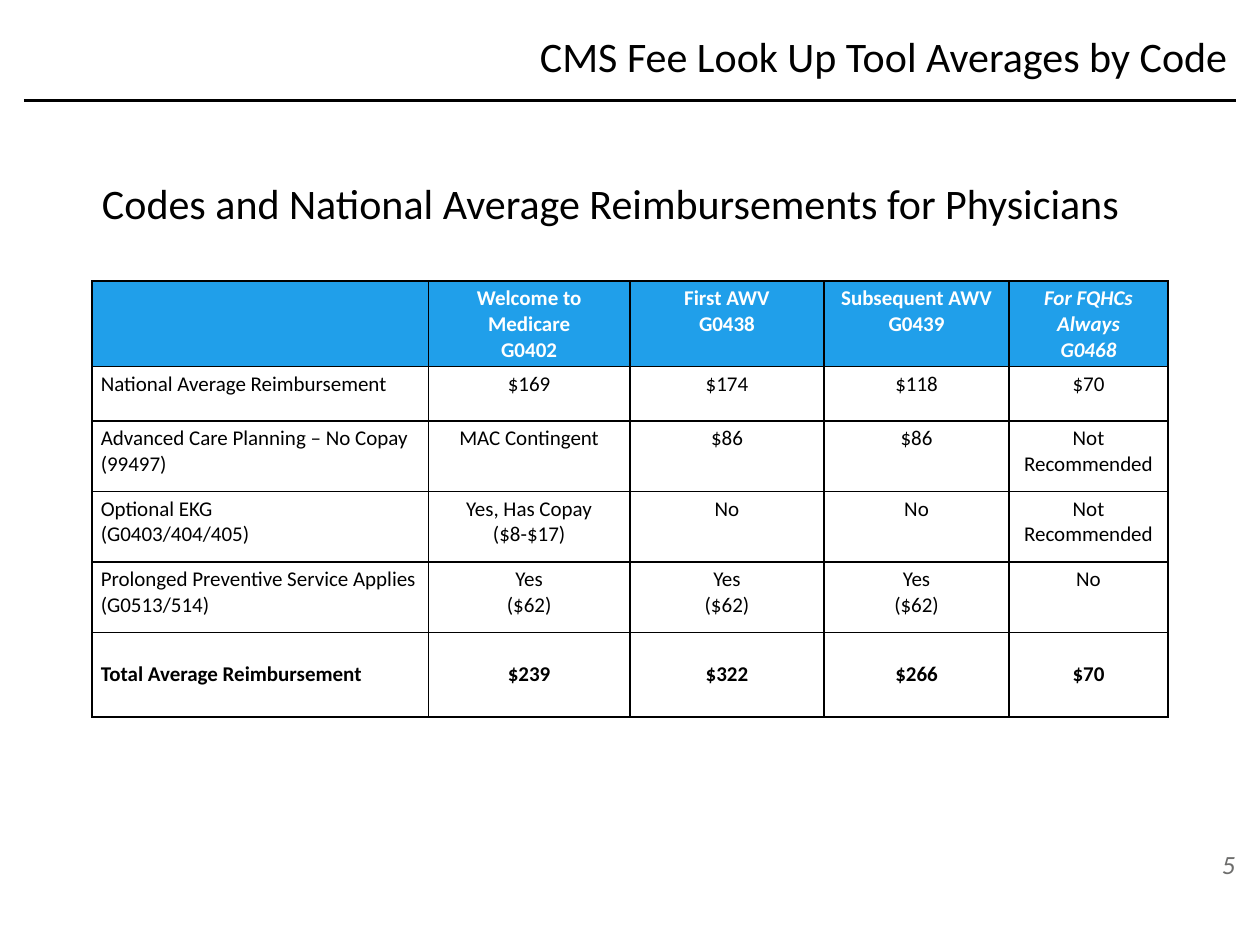
from pptx import Presentation
from pptx.dml.color import RGBColor
from pptx.enum.shapes import MSO_CONNECTOR
from pptx.enum.text import MSO_ANCHOR, PP_ALIGN
from pptx.oxml.ns import qn
from pptx.util import Inches, Pt
from lxml import etree

LEFT, CENTER, RIGHT = PP_ALIGN.LEFT, PP_ALIGN.CENTER, PP_ALIGN.RIGHT
MIDDLE, TOP = MSO_ANCHOR.MIDDLE, MSO_ANCHOR.TOP
STRAIGHT = MSO_CONNECTOR.STRAIGHT
TITLE_ONLY = 5
FONT = "Calibri"
COLORS = {"ink": "000000", "header": "209FEA", "light": "FFFFFF", "muted": "6D6D6C"}
GRID_COLUMNS, GRID_ROWS = 100, 75
UNIT = Inches(0.1)

TITLE_BOX = (41.7, 1.9, 56.7, 5)
RULE_BOX = (1.9, 8, 96.2, 0)
SUBTITLE_BOX = (3.6, 13.6, 86.2, 5)
TABLE_BOX = (7.3, 22.3, 85.4, 34.6)
NUMBER_BOX = (76.5, 66.6, 22.5, 4)

COLUMN_SHARES = (26.7, 16, 15.4, 14.7, 12.6)
ROW_SHARES = (6.8, 4.3, 5.6, 5.6, 5.6, 6.7)
FEES = (
    ("", "Welcome to Medicare\nG0402", "First AWV\nG0438", "Subsequent AWV\nG0439",
     "For FQHCs\nAlways\nG0468"),
    ("National Average Reimbursement", "$169", "$174", "$118", "$70"),
    ("Advanced Care Planning – No Copay (99497)", "MAC Contingent", "$86", "$86",
     "Not Recommended"),
    ("Optional EKG\n(G0403/404/405)", "Yes, Has Copay\n($8-$17)", "No", "No",
     "Not Recommended"),
    ("Prolonged Preventive Service Applies (G0513/514)", "Yes\n($62)", "Yes\n($62)",
     "Yes\n($62)", "No"),
    ("Total Average Reimbursement", "$239", "$322", "$266", "$70"),
)


def rgb(name):
    """Return a palette colour."""
    return RGBColor.from_string(COLORS[name])


def on_grid(box):
    """Turn grid columns and rows into slide lengths."""
    return [round(length * UNIT) for length in box]


def write(frame, text, size, color="ink", align=RIGHT, bold=False, italic=False):
    """Fill a text frame and format its paragraphs."""
    frame.text = text
    frame.word_wrap = True
    for para in frame.paragraphs:
        para.alignment = align
        for span in para.runs:
            font = span.font
            font.name, font.size, font.bold, font.italic = FONT, Pt(size), bold, italic
            font.color.rgb = rgb(color)


def add_header(page, title_box, rule_box):
    """Place the slide title and the rule under it."""
    title = page.shapes.title
    title.left, title.top, title.width, title.height = on_grid(title_box)
    title.text_frame.vertical_anchor = MIDDLE
    write(title.text_frame, "CMS Fee Look Up Tool Averages by Code", 24)
    left, top, width, height = on_grid(rule_box)
    rule = page.shapes.add_connector(STRAIGHT, left, top, left + width, top + height)
    rule.line.color.rgb = rgb("ink")
    rule.line.width = Pt(1.5)
    etree.SubElement(rule._element.spPr, qn("a:effectLst"))


def add_text(page, box, text, size, anchor=TOP, **style):
    """Place a right-aligned text box."""
    frame = page.shapes.add_textbox(*on_grid(box)).text_frame
    frame.vertical_anchor = anchor
    write(frame, text, size, **style)


def set_borders(cell):
    """Draw a thin line on each side of a cell."""
    properties = cell._tc.get_or_add_tcPr()
    for side in ("lnL", "lnR", "lnT", "lnB"):
        line = etree.SubElement(properties, qn(f"a:{side}"), w=str(Pt(1)))
        fill = etree.SubElement(line, qn("a:solidFill"))
        etree.SubElement(fill, qn("a:srgbClr"), val=COLORS["ink"])


def format_cell(cell, text, row, column):
    """Write and style a cell according to its row and column."""
    is_header, is_total = row == 0, row == len(FEES) - 1
    last_column = column == len(COLUMN_SHARES) - 1
    set_borders(cell)
    if is_header:
        cell.fill.solid()
        cell.fill.fore_color.rgb = rgb("header")
    else:
        cell.fill.background()
    cell.margin_left = cell.margin_right = Inches(0.07)
    cell.margin_top = cell.margin_bottom = Inches(0.04)
    cell.vertical_anchor = MIDDLE if is_total else TOP
    write(cell.text_frame, text, 12, "light" if is_header else "ink",
          CENTER if column else LEFT, is_header or is_total, is_header and last_column)


def add_fee_table(page, box):
    """Place the fee table, sharing its box among columns and rows."""
    left, top, width, height = on_grid(box)
    table = page.shapes.add_table(len(ROW_SHARES), len(COLUMN_SHARES),
                                  left, top, width, height).table
    table.first_row = table.horz_banding = False
    for column, share in zip(table.columns, COLUMN_SHARES):
        column.width = round(width * share / sum(COLUMN_SHARES))
    for row, share in zip(table.rows, ROW_SHARES):
        row.height = round(height * share / sum(ROW_SHARES))
    for row, texts in enumerate(FEES):
        for column, text in enumerate(texts):
            format_cell(table.cell(row, column), text, row, column)


def main():
    """Build and save the deck."""
    deck = Presentation()
    deck.slide_width, deck.slide_height = GRID_COLUMNS * UNIT, GRID_ROWS * UNIT
    page = deck.slides.add_slide(deck.slide_layouts[TITLE_ONLY])
    add_header(page, TITLE_BOX, RULE_BOX)
    add_text(page, SUBTITLE_BOX, "Codes and National Average Reimbursements for Physicians", 24)
    add_fee_table(page, TABLE_BOX)
    add_text(page, NUMBER_BOX, "5", 15, MIDDLE, color="muted", italic=True)
    deck.save("out.pptx")


if __name__ == "__main__":
    main()
